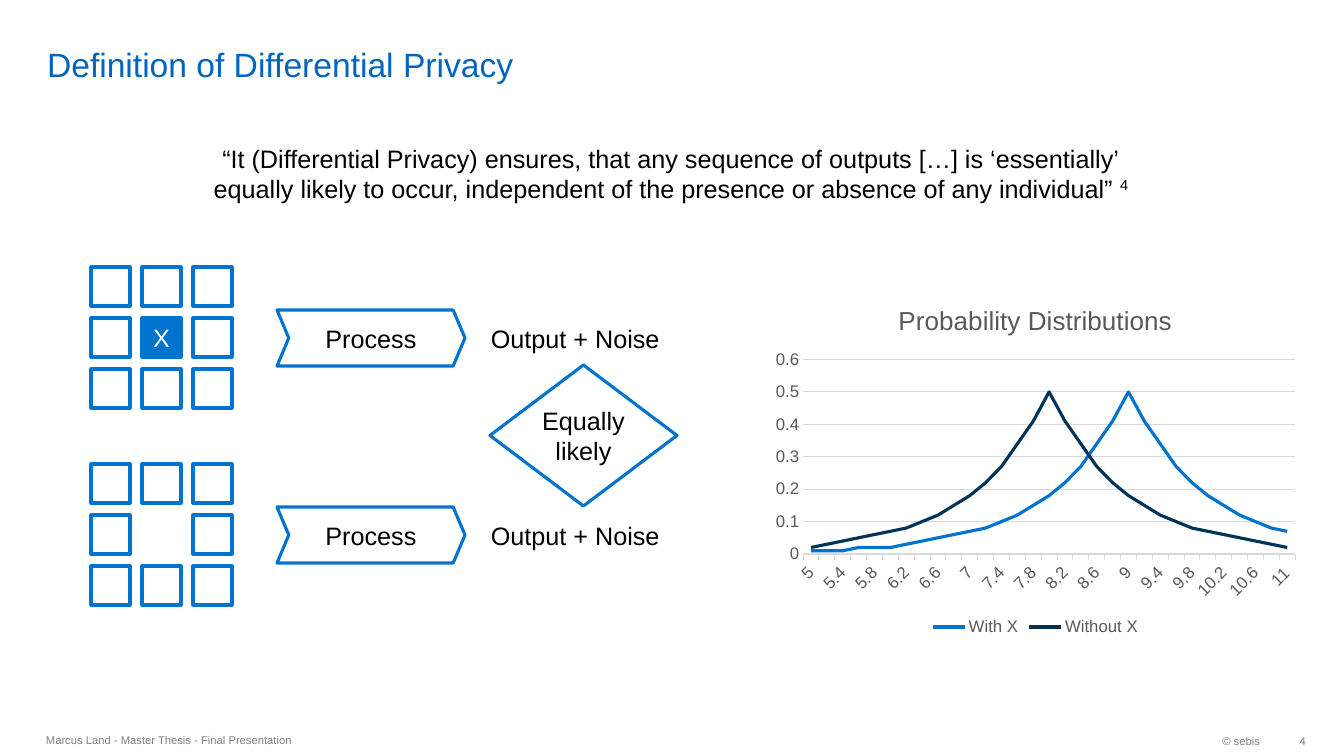
"""Build the slide that defines differential privacy."""
import math

from lxml import etree
from pptx import Presentation
from pptx import util as u
from pptx.chart.data import CategoryChartData
from pptx.dml.color import RGBColor
from pptx.enum import chart as ch, shapes, text
from pptx.oxml.ns import qn

PX = 914400 / 100.8
THEME = {
    "font": "Arial",
    "title": "0065BD", "blue": "0073CF", "navy": "003359", "white": "FFFFFF",
    "black": "000000", "footer": "808080", "axis": "595959", "grid": "D9D9D9",
    "sz_title": 24, "sz_body": 18, "sz_footer": 8, "sz_chart_title": 18.6, "sz_axis": 12,
    "line": 2.25, "thin": 0.75,
}
ALIGN = text.PP_ALIGN
MIDDLE = text.MSO_ANCHOR.MIDDLE


def style(font, size, color):
    font.name = THEME["font"]
    font.size = u.Pt(THEME[size])
    font.bold = False
    font.color.rgb = RGBColor.from_string(THEME[color])


def write(sp, lines, size="sz_body", color="black", align=ALIGN.CENTER, anchor=MIDDLE):
    tf = sp.text_frame
    tf.word_wrap = True
    tf.auto_size = text.MSO_AUTO_SIZE.NONE
    tf.vertical_anchor = anchor
    for i, line in enumerate(lines):
        p = tf.add_paragraph() if i else tf.paragraphs[0]
        p.alignment = align
        r = p.add_run()
        r.text = line
        style(r.font, size, color)
    return tf


prs = Presentation()
prs.slide_width, prs.slide_height = u.Emu(round(1344 * PX)), u.Emu(round(756 * PX))
s = prs.slides.add_slide(prs.slide_layouts[5])

title = s.shapes.title
title.left, title.top, title.width, title.height = [round(v * PX) for v in (37, 5, 1167, 79)]
tf = write(title, ["Definition of Differential Privacy"], "sz_title", "title",
           ALIGN.LEFT, text.MSO_ANCHOR.BOTTOM)
tf.margin_top = tf.margin_bottom = 0

footers = [
    ((1034, 725, 236, 32), "© sebis", ALIGN.RIGHT, 10),
    ((36, 724, 635, 32), "Marcus Land - Master Thesis - Final Presentation", ALIGN.LEFT, 10),
    ((1270, 725, 36, 32), "4", ALIGN.RIGHT, 0),
]
for box, words, align, inset in footers:
    sp = s.shapes.add_textbox(*[round(v * PX) for v in box])
    tf = write(sp, [words], "sz_footer", "footer", align)
    tf.margin_right = round(inset * PX)

quote = s.shapes.add_textbox(*[round(v * PX) for v in (36, 138, 1270, 72)])
tf = write(quote, [
    "“It (Differential Privacy) ensures, that any sequence of outputs […] is ‘essentially’",
    "equally likely to occur, independent of the presence or absence of any individual” ",
], anchor=text.MSO_ANCHOR.TOP)
r = tf.paragraphs[1].add_run()
r.text = "4"
style(r.font, "sz_body", "black")
r._r.get_or_add_rPr().set("baseline", "30000")

SHAPE = shapes.MSO_SHAPE
flow = []
for top, has_x in ((267, True), (464, False)):
    for row in range(3):
        for col in range(3):
            center = row == col == 1
            if not center or has_x:
                flow.append((SHAPE.RECTANGLE, (91 + 51 * col, top + 51 * row, 39, 39), {},
                             ["X"] if center else [], "blue" if center else "white"))
    flow.append((SHAPE.CHEVRON, (277, top + 43, 188, 56), {"adj": 21100}, ["Process"], "white"))
    output = s.shapes.add_textbox(*[round(v * PX) for v in (481, top + 51, 279, 40)])
    write(output, ["Output + Noise"], align=ALIGN.LEFT, anchor=text.MSO_ANCHOR.TOP)
flow.append((SHAPE.UP_DOWN_ARROW, (490, 365, 187, 141), {"adj1": 100000, "adj2": 50000},
             ["Equally", "likely"], "white"))

for kind, box, guides, lines, fill in flow:
    sp = s.shapes.add_shape(kind, *[round(v * PX) for v in box])
    sp.shadow.inherit = False
    sp.fill.solid()
    sp.fill.fore_color.rgb = RGBColor.from_string(THEME[fill])
    sp.line.color.rgb = RGBColor.from_string(THEME["blue"])
    sp.line.width = u.Pt(THEME["line"])
    geometry = sp._element.spPr.find(qn("a:prstGeom"))
    for old in geometry.findall(qn("a:avLst")):
        geometry.remove(old)
    guide_list = etree.SubElement(geometry, qn("a:avLst"))
    for name, value in guides.items():
        etree.SubElement(guide_list, qn("a:gd"), name=name, fmla=f"val {value}")
    if lines:
        write(sp, lines, color="white" if fill == "blue" else "black")

xs = [5 + 0.2 * i for i in range(31)]
curves = [("With X", 9, "blue"), ("Without X", 8, "navy")]
data = CategoryChartData()
data.categories = [f"{x:g}" for x in xs]
for name, peak, color in curves:
    data.add_series(name, [round(0.5 * math.exp(-abs(x - peak)), 2) for x in xs])
chart = s.shapes.add_chart(ch.XL_CHART_TYPE.LINE,
                           *[round(v * PX) for v in (765, 286, 541, 354)], data).chart
style(chart.font, "sz_axis", "axis")
chart.has_title = True
r = chart.chart_title.text_frame.paragraphs[0].add_run()
r.text = "Probability Distributions"
style(r.font, "sz_chart_title", "axis")
chart.chart_title.include_in_layout = False
chart.has_legend = True
chart.legend.position = ch.XL_LEGEND_POSITION.BOTTOM
chart.legend.include_in_layout = False
style(chart.legend.font, "sz_axis", "axis")
chart.plots[0].vary_by_categories = False
for series, (name, peak, color) in zip(chart.plots[0].series, curves):
    series.smooth = False
    series.marker.style = ch.XL_MARKER_STYLE.NONE
    series.format.line.color.rgb = RGBColor.from_string(THEME[color])
    series.format.line.width = u.Pt(THEME["line"])

cat, val = chart.category_axis, chart.value_axis
val.minimum_scale, val.maximum_scale, val.major_unit = 0, 0.6, 0.1
val.major_tick_mark = ch.XL_TICK_MARK.NONE
val.format.line.fill.background()
cat.major_tick_mark = ch.XL_TICK_MARK.OUTSIDE
for axis in (cat, val):
    style(axis.tick_labels.font, "sz_axis", "axis")
for line in (cat.format.line, val.major_gridlines.format.line):
    line.color.rgb = RGBColor.from_string(THEME["grid"])
    line.width = u.Pt(THEME["thin"])
cat._element.find(qn("c:txPr"))[0].set("rot", "-2700000")
skip = etree.Element(qn("c:tickLblSkip"), val="2")
cat._element.find(qn("c:noMultiLvlLbl")).addprevious(skip)

prs.save("out.pptx")
